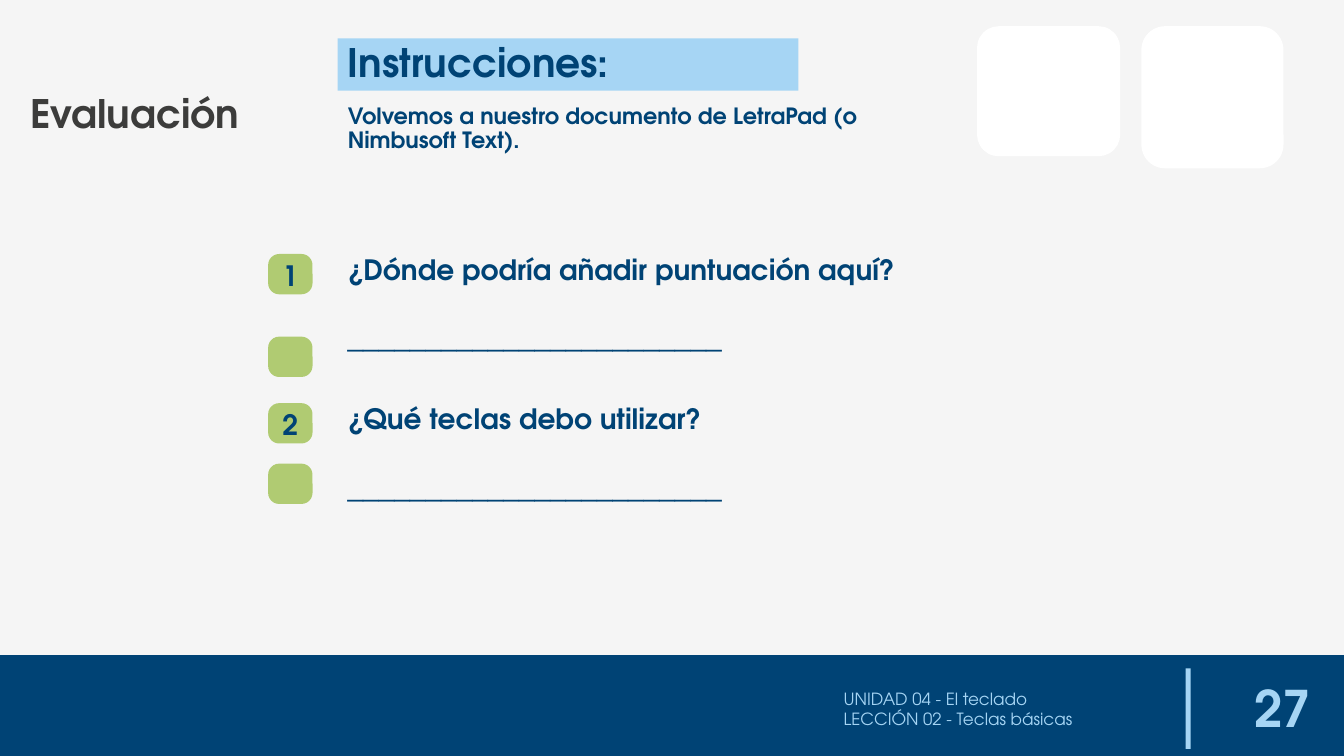
from pptx import Presentation
from pptx.dml.color import RGBColor
from pptx.enum import shapes, text
from pptx.oxml import xmlchemy
from pptx.util import Inches, Pt

COLORS = {
    "navy": "004375",
    "sky": "A6D5F4",
    "green": "B0CB72",
    "charcoal": "3C3C3B",
    "white": "FFFFFF",
    "paper": "F5F5F5",
}
FONT = "TeX Gyre Adventor"
RECT = shapes.MSO_SHAPE.RECTANGLE
ROUNDED = shapes.MSO_SHAPE.ROUNDED_RECTANGLE
LEFT, CENTER, RIGHT = text.PP_ALIGN.LEFT, text.PP_ALIGN.CENTER, text.PP_ALIGN.RIGHT
TOP, MIDDLE = text.MSO_ANCHOR.TOP, text.MSO_ANCHOR.MIDDLE


def color(name):
    """Return the named palette color."""
    return RGBColor.from_string(COLORS[name])


def place(shape, box):
    """Move a shape to a box of left, top, width and height in inches."""
    shape.left, shape.top, shape.width, shape.height = map(Inches, box)


def add_panel(page, kind, box, fill, corner=None):
    """Add a flat filled shape without outline."""
    panel = page.shapes.add_shape(kind, *map(Inches, box))
    panel.shadow.inherit = False
    panel.fill.solid()
    panel.fill.fore_color.rgb = color(fill)
    panel.line.fill.background()
    if corner is not None:
        panel.adjustments[0] = corner
    return panel


def write(shape, words, size, ink="navy", bold=True, font=FONT, align=LEFT,
          anchor=TOP, spacing=1.0):
    """Set the text of a shape and format every paragraph."""
    frame = shape.text_frame
    frame.text = words
    frame.word_wrap = True
    frame.auto_size = text.MSO_AUTO_SIZE.NONE
    frame.vertical_anchor = anchor
    for para in frame.paragraphs:
        para.alignment = align
        para.line_spacing = spacing
        para.space_before = Pt(0)
        for span in para.runs:
            span.font.name = font
            span.font.size = Pt(size)
            span.font.bold = bold
            span.font.color.rgb = color(ink)


def add_text(page, box, words, size, **style):
    """Add a text box with formatted words."""
    write(page.shapes.add_textbox(*map(Inches, box)), words, size, **style)


def remove_bullets(shape):
    """Turn off the bullets and hanging indents of a placeholder."""
    for para in shape.text_frame.paragraphs:
        props = para._p.get_or_add_pPr()
        props.set("marL", "0")
        props.set("indent", "0")
        xmlchemy.OxmlElement("a:buNone")
        props.append(xmlchemy.OxmlElement("a:buNone"))


def add_header(page, left, top):
    """Place the title, the instructions and the two white tiles."""
    title, body = page.shapes.title, page.placeholders[1]
    place(title, (left, top + 0.58, 2.58, 0.6))
    write(title, "Evaluación", 28, ink="charcoal")

    heading = add_panel(page, RECT, (left + 3.15, top + 0.12, 4.57, 0.52), "sky")
    write(heading, "Instrucciones:", 28, spacing=0.9)

    place(body, (left + 3.15, top + 0.73, 6.14, 0.96))
    write(body, "Volvemos a nuestro documento de LetraPad (o Nimbusoft Text).", 16,
          spacing=0.9)
    remove_bullets(body)

    add_panel(page, ROUNDED, (left + 9.49, top, 1.42, 1.29), "white", 0.167)
    add_panel(page, ROUNDED, (left + 11.12, top, 1.41, 1.41), "white", 0.167)


def add_question(page, left, top, number, question, answer_badge_gap):
    """Place a numbered question with its answer line and badges."""
    for gap, label in ((0, number), (answer_badge_gap, "")):
        badge = add_panel(page, ROUNDED, (left, top + gap, 0.44, 0.4), "green", 0.273)
        if label:
            write(badge, label, 20, align=CENTER, spacing=0.9)
    text_left = left + 0.69
    add_text(page, (text_left, top, 9.56, 0.4), question, 20, spacing=0.8)
    add_text(page, (text_left, top + 0.66, 9.56, 0.4), "_" * 24, 20, bold=False,
             font="Arial", spacing=0.8)


def add_footer(page, top, width):
    """Place the footer band with the lesson name and page number."""
    add_panel(page, RECT, (0, top, width, 1), "navy")
    add_panel(page, RECT, (11.76, top + 0.13, 0.05, 0.8), "sky")
    add_text(page, (8.27, top + 0.2, 3.37, 0.66),
             "UNIDAD 04 - El teclado\nLECCIÓN 02 - Teclas básicas", 12,
             ink="sky", bold=False, anchor=MIDDLE)
    add_text(page, (11.91, top + 0.19, 1.19, 0.66), "27", 36, ink="sky",
             align=RIGHT, anchor=MIDDLE)


def main():
    """Build the evaluation slide and save the deck."""
    deck = Presentation()
    deck.slide_width, deck.slide_height = Inches(13.33), Inches(7.5)
    page = deck.slides.add_slide(deck.slide_layouts[1])
    page.background.fill.solid()
    page.background.fill.fore_color.rgb = color("paper")

    add_footer(page, 6.5, 13.33)
    add_header(page, 0.2, 0.26)
    add_question(page, 2.66, 2.52, "1", "¿Dónde podría añadir puntuación aquí?", 0.82)
    add_question(page, 2.66, 4, "2", "¿Qué teclas debo utilizar?", 0.6)
    deck.save("out.pptx")


if __name__ == "__main__":
    main()
